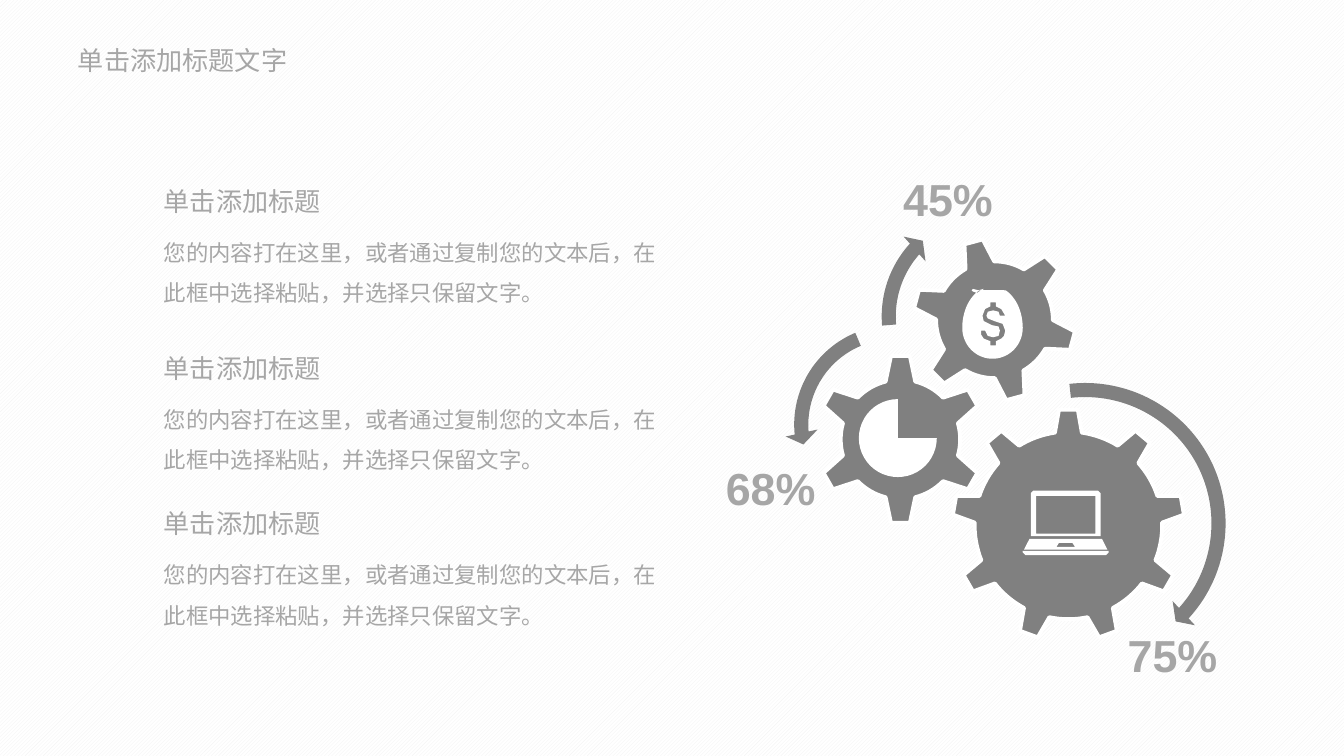
import math

import lxml.etree
import pptx
import pptx.dml.color
import pptx.enum.dml
import pptx.enum.shapes
import pptx.enum.text
import pptx.oxml.ns
import pptx.util
from pptx.util import Inches

GREY, PALE, WHITE = "808080", "A6A6A6", "FFFFFF"
CHINESE = "Noto Sans CJK SC"


def color(value):
    return pptx.dml.color.RGBColor.from_string(value)


def write(shape, text, size, font, inset=(0.1, 0.05), wrap=False, spacing=None, bold=False):
    frame = shape.text_frame
    frame.margin_left = frame.margin_right = Inches(inset[0])
    frame.margin_top = frame.margin_bottom = Inches(inset[1])
    frame.word_wrap = wrap
    frame.auto_size = pptx.enum.text.MSO_AUTO_SIZE.SHAPE_TO_FIT_TEXT
    frame.vertical_anchor = pptx.enum.text.MSO_ANCHOR.TOP
    paragraph = frame.paragraphs[0]
    paragraph.alignment = pptx.enum.text.PP_ALIGN.LEFT
    if spacing:
        paragraph.line_spacing = spacing
    run = paragraph.add_run()
    run.text = text
    run.font.size = pptx.util.Pt(size)
    run.font.bold = bold
    run.font.color.rgb = color(PALE)
    run.font.name = font
    properties = run._r.get_or_add_rPr()
    lxml.etree.SubElement(properties, pptx.oxml.ns.qn("a:ea"), typeface=font)


presentation = pptx.Presentation()
presentation.slide_width = Inches(10)
presentation.slide_height = Inches(10 * 9 / 16)
slide = presentation.slides.add_slide(presentation.slide_layouts[5])

background = slide.background.fill
background.patterned()
background.pattern = pptx.enum.dml.MSO_PATTERN.LIGHT_UPWARD_DIAGONAL
background.fore_color.rgb = color("F2F2F2")
background.back_color.rgb = color(WHITE)

title = slide.shapes.title
title.left, title.top, title.width, title.height = map(Inches, (0.51, 0.29, 1.72, 0.31))
write(title, "单击添加标题文字", 14, CHINESE, (0.07, 0.04))

for top in (1.33, 2.57, 3.73):
    item = slide.shapes.add_group_shape()
    body = item.shapes.add_textbox(Inches(1.12), Inches(top + 0.3), Inches(3.9), Inches(0.67))
    write(body, "您的内容打在这里，或者通过复制您的文本后，在此框中选择粘贴，并选择只保留文字。",
          12, CHINESE, wrap=True, spacing=1.5)
    heading = item.shapes.add_textbox(Inches(1.12), Inches(top), Inches(1.38), Inches(0.34))
    write(heading, "单击添加标题", 14, CHINESE)

presets = pptx.enum.shapes.MSO_SHAPE
arrows = [
    (presets.CIRCULAR_ARROW, 6.96, 2.78, 2.23, (0.047, 2.99, 25.393, 158.123, 0.055)),
    (presets.LEFT_CIRCULAR_ARROW, 5.84, 2.35, 1.62, (0.065, 4.3, 104.891, 148.378, 0.075)),
    (presets.CIRCULAR_ARROW, 6.49, 1.48, 1.75, (0.06, 3.941, 133.138, 105.082, 0.07)),
]
for preset, left, top, size, adjustments in arrows:
    arrow = slide.shapes.add_shape(preset, Inches(left), Inches(top), Inches(size), Inches(size))
    for index, value in enumerate(adjustments):
        arrow.adjustments[index] = value
    arrow.fill.solid()
    arrow.fill.fore_color.rgb = color(GREY)
    arrow.line.fill.background()
    arrow.shadow.inherit = False

gears = [
    (7.95, 3.91, 9, 0, 0.69, 0.1, 0.86),
    (6.7, 3.27, 6, 0, 0.43, 0.11, 0.62),
    (7.4, 2.38, 6, -15, 0.42, 0.11, 0.6),
]
outlines = []
for center_x, center_y, teeth, turn, root, base, tip in gears:
    points = []
    step = 2 * math.pi / teeth
    edge = math.atan2(base, root)
    for tooth in range(teeth):
        middle = math.radians(turn) + tooth * step
        polar = [(math.hypot(0.07, tip), middle + side * math.atan2(0.07, tip)) for side in (-1, 1)]
        polar += [(math.hypot(base, root), middle + edge + (step - 2 * edge) * part / 8)
                  for part in range(9)]
        points += [(center_x + radius * math.sin(angle), center_y - radius * math.cos(angle))
                   for radius, angle in polar]
    outlines.append((GREY, [points]))

laptop = [
    [(7.66, 4.01), (7.62, 4.09), (8.24, 4.09), (8.2, 4.01)],
    [(7.86, 4.07), (7.88, 4.04), (7.98, 4.04), (8, 4.07)],
    [(8.19, 3.99), (8.19, 3.67), (8.17, 3.65), (7.69, 3.65), (7.67, 3.67), (7.67, 3.99)],
    [(8.15, 3.97), (7.71, 3.97), (7.71, 3.69), (8.15, 3.69)],
    [(8.25, 4.1), (7.61, 4.1), (7.61, 4.11), (7.63, 4.13), (8.23, 4.13), (8.25, 4.11)],
]
bag = []
for degrees in range(-68, 249, 4):
    sine = math.sin(math.radians(degrees))
    bag.append((7.385 + 0.225 * math.cos(math.radians(degrees)),
                max(2.16, 2.44 + (0.23 if sine > 0 else 0.31) * sine)))
bag += [(7.27, 2.18), (7.24, 2.17), (7.23, 2.16), (7.24, 2.15), (7.28, 2.16), (7.32, 2.15), (7.31, 2.16)]
dollar = [
    (7.45, 2.52), (7.41, 2.54), (7.41, 2.57), (7.37, 2.57), (7.37, 2.54), (7.32, 2.52),
    (7.3, 2.49), (7.3, 2.46), (7.33, 2.46), (7.35, 2.5), (7.39, 2.51), (7.43, 2.5),
    (7.44, 2.46), (7.43, 2.43), (7.38, 2.42), (7.32, 2.39), (7.31, 2.35), (7.33, 2.3),
    (7.37, 2.28), (7.37, 2.25), (7.41, 2.25), (7.41, 2.28), (7.45, 2.3), (7.48, 2.35),
    (7.44, 2.35), (7.43, 2.32), (7.39, 2.31), (7.35, 2.32), (7.34, 2.35), (7.35, 2.37),
    (7.4, 2.39), (7.46, 2.41), (7.48, 2.46), (7.47, 2.5),
]
outlines += [(WHITE, laptop), (WHITE, [bag, dollar])]

machine = slide.shapes.add_group_shape()
for fill, contours in outlines:
    contours = [[(Inches(x), Inches(y)) for x, y in contour] for contour in contours]
    builder = machine.shapes.build_freeform(*contours[0][0])
    builder.add_line_segments(contours[0][1:], close=True)
    for contour in contours[1:]:
        builder.move_to(*contour[0])
        builder.add_line_segments(contour[1:], close=True)
    outline = builder.convert_to_shape()
    outline.shadow.inherit = False
    outline.fill.solid()
    outline.fill.fore_color.rgb = color(fill)
    if fill == GREY:
        outline.line.color.rgb = color(WHITE)
        outline.line.width = pptx.util.Pt(2)
    else:
        outline.line.fill.background()

pie = machine.shapes.add_shape(presets.PIE, Inches(6.39), Inches(2.97), Inches(0.58), Inches(0.58))
pie.adjustments[0] = 0
pie.adjustments[1] = 162
pie.fill.solid()
pie.fill.fore_color.rgb = color(WHITE)
pie.line.fill.background()
pie.shadow.inherit = False

for text, left, top in (("45%", 6.65, 1.24), ("68%", 5.33, 3.39), ("75%", 8.32, 4.63)):
    label = slide.shapes.add_textbox(Inches(left), Inches(top), Inches(0.82), Inches(0.48))
    write(label, text, 24, "Arial", (0.07, 0.04), bold=True)

presentation.save("out.pptx")
